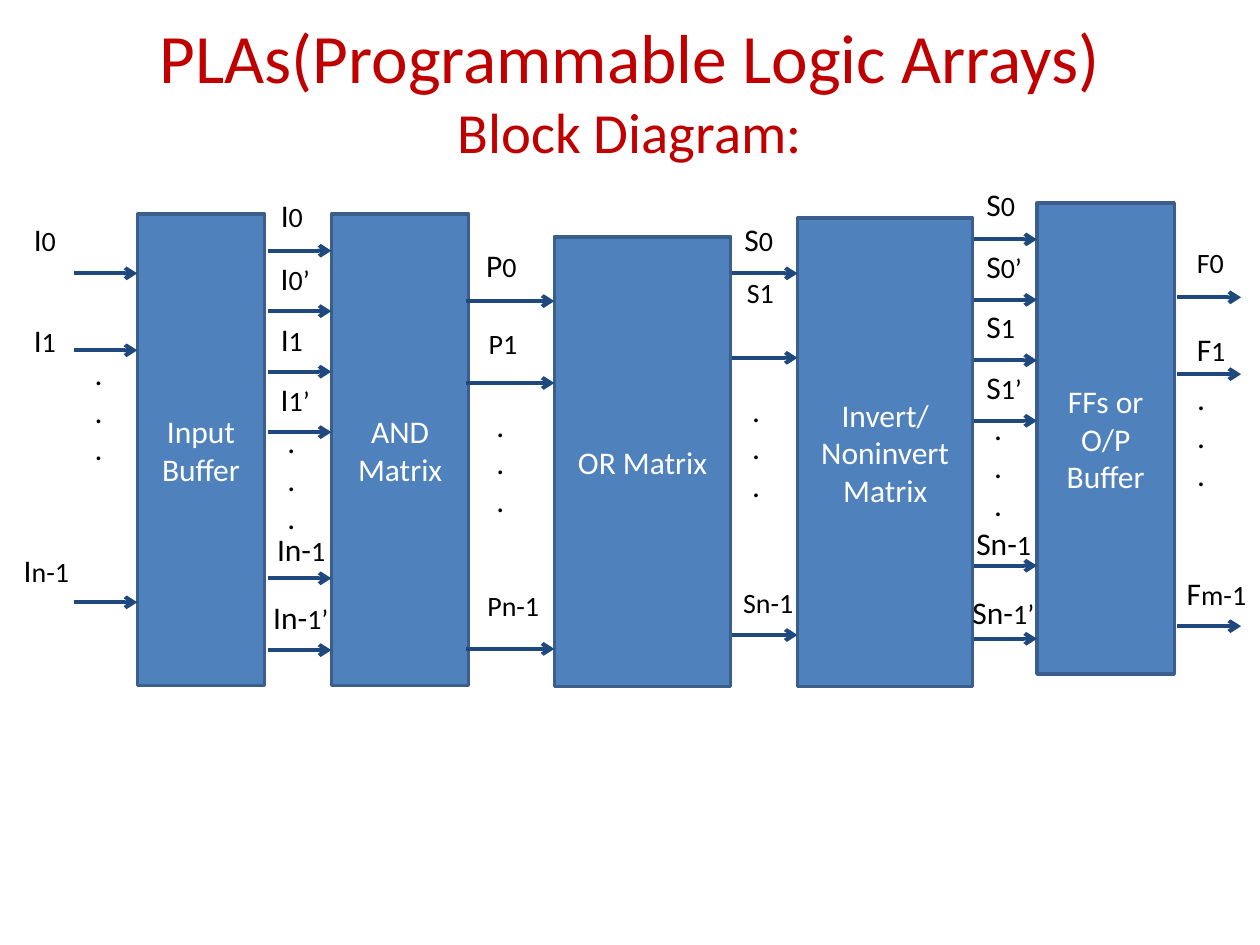
"""Build the block diagram slide of a programmable logic array."""
from pptx import Presentation
from pptx import util as u
from pptx.dml.color import RGBColor
from pptx.enum import shapes, text
from pptx.oxml import ns
from lxml import etree

BLACK = RGBColor(0x00, 0x00, 0x00)
WHITE = RGBColor(0xFF, 0xFF, 0xFF)
RED = RGBColor(0xC0, 0x00, 0x00)
BLUE = RGBColor(0x4F, 0x81, 0xBD)
EDGE = RGBColor(0x3A, 0x5F, 0x8C)
NAVY = RGBColor(0x1F, 0x49, 0x7D)

deck = Presentation()
deck.slide_width, deck.slide_height = u.Inches(10), u.Inches(7.5)
COL, ROW = deck.slide_width / 100, deck.slide_height / 75
slide = deck.slides.add_slide(deck.slide_layouts[5])


def cells(left, top, width, height):
    return [round(n * step) for n, step in zip((left, top, width, height), (COL, ROW, COL, ROW))]


def add_run(paragraph, words, size, color):
    run = paragraph.add_run()
    run.text = words
    run.font.name = "Calibri"
    run.font.size = u.Pt(size)
    run.font.color.rgb = color


title = slide.shapes.title
title.left, title.top, title.width, title.height = cells(5, 1.7, 90, 10.8)
title.text_frame.vertical_anchor = text.MSO_ANCHOR.MIDDLE
heading = title.text_frame.paragraphs[0]
heading.alignment = text.PP_ALIGN.CENTER
add_run(heading, "PLAs(Programmable Logic Arrays)", 39.6, RED)
heading.add_line_break()
add_run(heading, "Block Diagram:", 32.4, RED)

stages = [
    ("Input Buffer", 10.9, 17, 10.1, 37.4),
    ("AND Matrix", 26.3, 17, 10.9, 37.4),
    ("OR Matrix", 44, 18.8, 14, 35.7),
    ("Invert/ Noninvert Matrix", 63.3, 17.3, 13.9, 37.2),
    ("FFs or O/P Buffer", 82.3, 16.1, 10.9, 37.4),
]
for stage, *place in stages:
    block = slide.shapes.add_shape(shapes.MSO_SHAPE.RECTANGLE, *cells(*place))
    block.shadow.inherit = False
    block.fill.solid()
    block.fill.fore_color.rgb = BLUE
    block.line.color.rgb = EDGE
    block.line.width = u.Pt(2)
    block.text_frame.vertical_anchor = text.MSO_ANCHOR.MIDDLE
    caption = block.text_frame.paragraphs[0]
    caption.alignment = text.PP_ALIGN.CENTER
    add_run(caption, stage, 18, WHITE)

# Each bus: start, end, label height, dots (left, top, width, height),
# then wires as (row, label left, label top, label width, large part, small part).
buses = [
    (5.9, 10.9, 7.5, (7.5, 27.6, 0.9, 18.6), [
        (21.7, 1.7, 17, 4, "I", "0"),
        (27.8, 1.7, 25, 4, "I", "1"),
        (47.8, 0.9, 43.2, 5.7, "I", "n-1")]),
    (21.3, 26.3, 4.7, (22.8, 33, 0.9, 18.6), [
        (19.9, 21.3, 15.1, 3.8, "I", "0"),
        (24.7, 21.3, 20.1, 4.4, "I", "0’"),
        (29.5, 21.3, 24.9, 3.8, "I", "1"),
        (34.3, 21.3, 29.7, 4.4, "I", "1’"),
        (45.9, 21, 41.6, 5.9, "In-", "1"),
        (51.6, 20.7, 47, 6.5, "In-", "1’")]),
    (37, 44, 7.2, (39.4, 31.7, 1.3, 19.6), [
        (23.9, 37.6, 19, 6.2, "P", "0"),
        (30.4, 37.8, 25.4, 6, "", "P1"),
        (51.5, 37.7, 46.2, 8.6, "", "Pn-1")]),
    (58.1, 63.3, 7.5, (59.7, 30.5, 1, 20.5), [
        (21.7, 58.1, 17, 4.5, "S", "0"),
        (28.4, 58.3, 21.4, 4.4, "", "S1"),
        (50.4, 58, 46, 6.3, "", "Sn-1")]),
    (77.3, 82.3, 4.7, (78.9, 32, 0.9, 18.6), [
        (19, 77.3, 14.2, 4.4, "S", "0"),
        (23.8, 77.3, 19.1, 4.9, "S", "0’"),
        (28.6, 77.3, 23.9, 4.4, "S", "1"),
        (33.4, 77.3, 28.7, 4.9, "S", "1’"),
        (44.9, 76.5, 41.1, 6.5, "Sn-", "1"),
        (50.7, 76.2, 46.6, 7, "Sn-", "1’")]),
    (93.4, 98.5, 4.7, (95, 29.6, 0.9, 18.6), [
        (23.6, 94, 19, 4.2, "", "F0"),
        (29.7, 94, 25.7, 4.4, "F", "1"),
        (49.7, 93.2, 45.1, 6.8, "F", "m-1")]),
]
for start, end, label_height, dots_place, wires in buses:
    for row, left, top, width, large, small in wires:
        ends = cells(start, row, end, row)
        wire = slide.shapes.add_connector(shapes.MSO_CONNECTOR.STRAIGHT, *ends)
        wire.line.color.rgb = NAVY
        wire.line.width = u.Pt(2.25)
        etree.SubElement(wire.line._get_or_add_ln(), ns.qn("a:tailEnd"), type="arrow")
        etree.SubElement(wire._element.spPr, ns.qn("a:effectLst"))

        signal = slide.shapes.add_textbox(*cells(left, top, width, label_height)).text_frame
        signal.word_wrap = False
        signal.auto_size = text.MSO_AUTO_SIZE.SHAPE_TO_FIT_TEXT
        for part, size in ((large, 18), (small, 16)):
            if part:
                add_run(signal.paragraphs[0], part, size, BLACK)

    dots = slide.shapes.add_textbox(*cells(*dots_place)).text_frame
    dots.word_wrap = True
    dots.margin_left = dots.margin_right = 0
    for paragraph in (dots.paragraphs[0], dots.add_paragraph(), dots.add_paragraph()):
        add_run(paragraph, ".", 18, BLACK)

deck.save("out.pptx")
